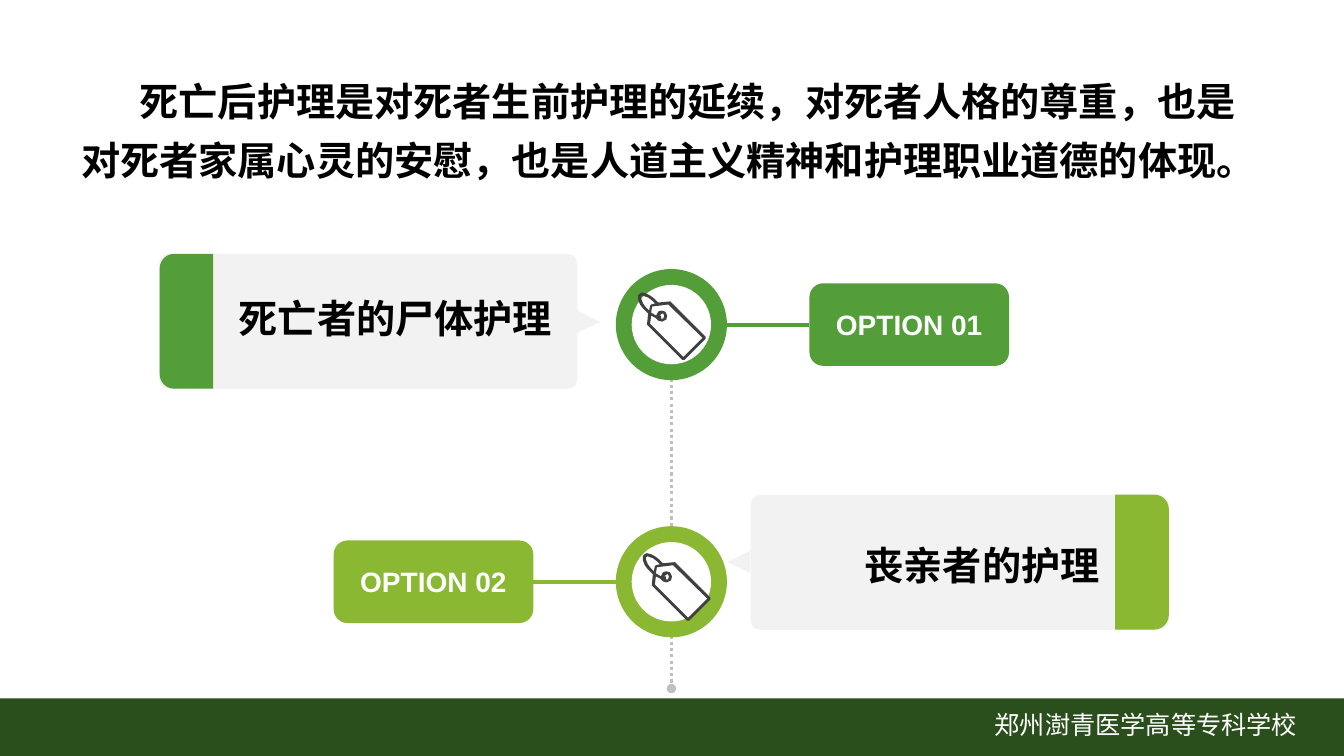
"""Build the slide on care after death, with two options on a time line."""
from lxml import etree
from pptx import Presentation
from pptx.dml.color import RGBColor
from pptx.enum.dml import MSO_LINE
from pptx.enum.shapes import MSO_CONNECTOR, MSO_SHAPE
from pptx.enum.text import MSO_ANCHOR, PP_ALIGN
from pptx.oxml.ns import qn
from pptx.util import Cm, Pt

RECT, ROUND = MSO_SHAPE.RECTANGLE, MSO_SHAPE.ROUNDED_RECTANGLE
OVAL, WEDGE = MSO_SHAPE.OVAL, MSO_SHAPE.ISOSCELES_TRIANGLE
CAP = MSO_SHAPE.ROUND_2_SAME_RECTANGLE
LINE, DOTS = MSO_CONNECTOR.STRAIGHT, MSO_LINE.ROUND_DOT
LEFT, MID, HIGH = PP_ALIGN.LEFT, MSO_ANCHOR.MIDDLE, MSO_ANCHOR.TOP
CENTER = PP_ALIGN.CENTER
LATIN, HAN = "Arial", "Noto Sans CJK SC"
GREEN, LIME, DARK = "549E39", "8AB833", "2A4F1C"
WHITE, BLACK, PALE, GRAY, INK = "FFFFFF", "000000", "F2F2F2", "BFBFBF", "404040"

prs = Presentation()
prs.slide_width, prs.slide_height = Cm(33.87), Cm(19.05)
slide = prs.slides.add_slide(prs.slide_layouts[6])
shapes = slide.shapes
color = RGBColor.from_string


def paint(shape, fill, turn=0, adjust=()):
    shape.shadow.inherit = False
    shape.fill.solid()
    shape.fill.fore_color.rgb = color(fill)
    shape.line.fill.background()
    shape.rotation = turn
    for index, value in enumerate(adjust):
        shape.adjustments[index] = value
    return shape


def write(shape, text, size=28, font=HAN, ink=BLACK, bold=True, align=LEFT, anchor=HIGH):
    frame = shape.text_frame
    frame.word_wrap = True
    frame.vertical_anchor = anchor
    para = frame.paragraphs[0]
    para.alignment = align
    run = para.add_run()
    run.text = text
    run.font.size, run.font.bold, run.font.name = Pt(size), bold, font
    run.font.color.rgb = color(ink)
    etree.SubElement(run.font._element, qn("a:ea"), typeface=font)
    return para


bar = shapes.add_shape(RECT, 0, Cm(17.6), prs.slide_width, Cm(1.45))
paint(bar, DARK)
school = shapes.add_textbox(Cm(24.82), Cm(17.75), Cm(8.2), Cm(1.3))
write(school, "郑州澍青医学高等专科学校", size=18, ink=WHITE, bold=False)

lead = shapes.add_textbox(Cm(1.32), Cm(1.52), Cm(30.8), Cm(3.6))
para = write(
    lead,
    "死亡后护理是对死者生前护理的延续，对死者人格的尊重，也是"
    "对死者家属心灵的安慰，也是人道主义精神和护理职业道德的体现。",
    font=LATIN,
)
para.line_spacing = 1.25
props = para._p.get_or_add_pPr()
props.set("marL", str(Cm(0.48)))
props.set("indent", str(Cm(1.47)))

axis = Cm(16.92)
trunk = shapes.add_connector(LINE, axis, Cm(9.22), axis, Cm(17.35))
trunk.line.color.rgb = color(GRAY)
trunk.line.width = Pt(2.25)
trunk.line.dash_style = DOTS
etree.SubElement(trunk.line._get_or_add_ln(), qn("a:tailEnd"), type="oval")
etree.SubElement(trunk._element.spPr, qn("a:effectLst"))

icon = [
    [(4, 0), (8, 1), (12, 3), (16, 6), (20, 10), (31, 9), (32, 9), (67, 44), (67, 46),
     (46, 67), (44, 67), (9, 32), (9, 31), (10, 21), (5, 16), (2, 12), (0, 7), (0, 3), (2, 1)],
    [(5, 3), (3, 4), (3, 6), (5, 11), (8, 15), (11, 18), (12, 13), (13, 12), (17, 11),
     (14, 8), (10, 5), (7, 4)],
    [(30, 12), (14, 14), (13, 20), (18, 23), (20, 19), (23, 18), (27, 19), (29, 23),
     (28, 27), (24, 29), (20, 28), (17, 25), (13, 23), (12, 31), (45, 64), (64, 45)],
    [(24, 21), (21, 23), (23, 23), (23, 26), (25, 26), (26, 23), (25, 21)],
]

# label, color, center y, tag x, side, card x/y, wedge x/y, cap x/y, turn, title, title x/y/w, icon x/y
options = [
    ("OPTION 01", GREEN, 8.18, 20.4, 1, (4.01, 6.4), (14.55, 7.82), (3, 7.42), 90,
     "死亡者的尸体护理", (5.77, 7.29, 8.53), (16.08, 7.37)),
    ("OPTION 02", LIME, 14.66, 8.41, 3, (18.92, 12.47), (18.34, 13.87), (27.08, 13.49), 270,
     "丧亲者的护理", (21.54, 13.51, 6.53), (16.2, 13.94)),
]
for label, hue, mid, tag_x, side, card, wedge, cap, turn, title, spot, sign in options:
    tag = shapes.add_shape(ROUND, Cm(tag_x), Cm(mid - 1.04), Cm(5.03), Cm(2.08))
    paint(tag, hue)
    write(tag, label, size=20, font=LATIN, ink=WHITE, align=CENTER, anchor=MID)

    link = shapes.add_connector(LINE, axis, Cm(mid), axis, Cm(mid))
    link.end_connect(tag, side)
    link.line.color.rgb = color(hue)
    link.line.width = Pt(3)
    etree.SubElement(link._element.spPr, qn("a:effectLst"))

    for width, fill in ((2.8, hue), (2, WHITE)):
        ring = shapes.add_shape(
            OVAL, axis - Cm(width / 2), Cm(mid - width / 2), Cm(width), Cm(width))
        paint(ring, fill)

    for kind, place, size, fill, angle, adjust in (
        (ROUND, card, (10.54, 3.4), PALE, 0, [0.07]),
        (WEDGE, wedge, (0.56, 0.58), PALE, turn, []),
        (CAP, cap, (3.4, 1.35), hue, 360 - turn, [0.27, 0]),
    ):
        part = shapes.add_shape(kind, *map(Cm, place + size))
        paint(part, fill, angle, adjust)

    left, top, width = spot
    write(shapes.add_textbox(Cm(left), Cm(top), Cm(width), Cm(1.45)), title)

    first, *rest = icon
    draft = shapes.build_freeform(*first[0], scale=Cm(0.0254))
    draft.add_line_segments(first[1:])
    for ring in rest:
        draft.move_to(*ring[0])
        draft.add_line_segments(ring[1:])
    paint(draft.convert_to_shape(*map(Cm, sign)), INK)

prs.save("out.pptx")
